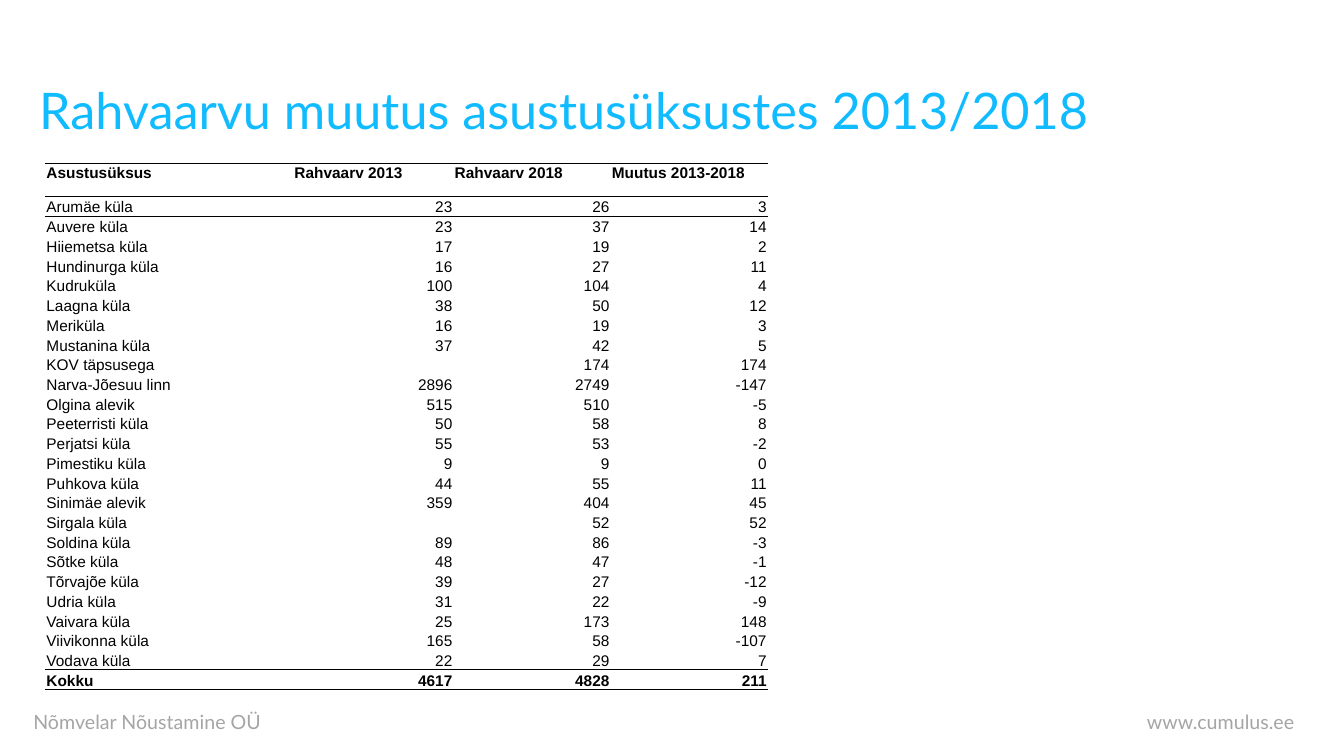
from dataclasses import dataclass
from typing import Any

import pptx
import pptx.dml.color
import pptx.enum.text
import pptx.oxml
import pptx.oxml.ns
import pptx.util

Cm = pptx.util.Cm
Pt = pptx.util.Pt
Align = pptx.enum.text.PP_ALIGN
Anchor = pptx.enum.text.MSO_ANCHOR

COLORS = {"title": "11BBFF", "footer": "A5A5A5", "table": "000000"}
NO_STYLE_NO_GRID = "{2D5ABB26-0587-4C30-8999-92F81FD0307C}"
COLUMN_WIDTHS = (6.25, 4.04, 3.96, 3.96)
HEADER_HEIGHT = 0.84
ROW_HEIGHT = 0.46
CELL_MARGINS = {
    "margin_left": Cm(0.03),
    "margin_right": Cm(0.03),
    "margin_top": Cm(0.03),
    "margin_bottom": Cm(0),
}


@dataclass
class TextLine:
    text: str
    left: float
    top: float
    width: float
    height: float
    size: int
    color: str
    inset: tuple[float, float]
    alignment: Any = Align.LEFT
    anchor: Any = Anchor.TOP
    line_spacing: float = 1.0


@dataclass
class Settlement:
    name: str
    before: int | None
    after: int
    change: int

    def labels(self) -> list[str]:
        values = (self.before, self.after, self.change)
        return [self.name] + ["" if value is None else str(value) for value in values]


TEXT_LINES = [
    TextLine("Nõmvelar Nõustamine OÜ", 0.74, 17.78, 6, 0.69, 14, "footer", (0.1, 0.1)),
    TextLine("www.cumulus.ee", 26.72, 17.78, 6, 0.69, 14, "footer", (0.1, 0.1), Align.RIGHT),
    TextLine("Rahvaarvu muutus asustusüksustes 2013/2018", 0.74, 1.02, 32, 3.68, 36, "title",
             (0.25, 0.13), Align.JUSTIFY, Anchor.MIDDLE, 0.9),
]

HEADINGS = ["Asustusüksus", "Rahvaarv 2013", "Rahvaarv 2018", "Muutus 2013-2018"]

SETTLEMENTS = [
    Settlement("Arumäe küla", 23, 26, 3),
    Settlement("Auvere küla", 23, 37, 14),
    Settlement("Hiiemetsa küla", 17, 19, 2),
    Settlement("Hundinurga küla", 16, 27, 11),
    Settlement("Kudruküla", 100, 104, 4),
    Settlement("Laagna küla", 38, 50, 12),
    Settlement("Meriküla", 16, 19, 3),
    Settlement("Mustanina küla", 37, 42, 5),
    Settlement("KOV täpsusega", None, 174, 174),
    Settlement("Narva-Jõesuu linn", 2896, 2749, -147),
    Settlement("Olgina alevik", 515, 510, -5),
    Settlement("Peeterristi küla", 50, 58, 8),
    Settlement("Perjatsi küla", 55, 53, -2),
    Settlement("Pimestiku küla", 9, 9, 0),
    Settlement("Puhkova küla", 44, 55, 11),
    Settlement("Sinimäe alevik", 359, 404, 45),
    Settlement("Sirgala küla", None, 52, 52),
    Settlement("Soldina küla", 89, 86, -3),
    Settlement("Sõtke küla", 48, 47, -1),
    Settlement("Tõrvajõe küla", 39, 27, -12),
    Settlement("Udria küla", 31, 22, -9),
    Settlement("Vaivara küla", 25, 173, 148),
    Settlement("Viivikonna küla", 165, 58, -107),
    Settlement("Vodava küla", 22, 29, 7),
    Settlement("Kokku", 4617, 4828, 211),
]


def apply_format(target: Any, values: dict[str, Any]) -> None:
    for name, value in values.items():
        setattr(target, name, value)


def add_run(paragraph: Any, text: str, color: str, font_format: dict[str, Any]) -> None:
    run = paragraph.add_run()
    run.text = text
    apply_format(run.font, font_format)
    run.font.color.rgb = pptx.dml.color.RGBColor.from_string(COLORS[color])


def draw_text_line(slide: Any, line: TextLine) -> None:
    shape = slide.shapes.add_textbox(Cm(line.left), Cm(line.top), Cm(line.width), Cm(line.height))
    horizontal, vertical = (Cm(length) for length in line.inset)
    apply_format(shape.text_frame, {
        "word_wrap": True,
        "vertical_anchor": line.anchor,
        "margin_left": horizontal,
        "margin_right": horizontal,
        "margin_top": vertical,
        "margin_bottom": vertical,
    })
    paragraph = shape.text_frame.paragraphs[0]
    apply_format(paragraph, {"alignment": line.alignment, "line_spacing": line.line_spacing})
    add_run(paragraph, line.text, line.color, {"name": "Lato", "size": Pt(line.size)})


def add_border(cell: Any, tag: str) -> None:
    namespace = pptx.oxml.ns.nsdecls("a")
    border = pptx.oxml.parse_xml(
        f'<a:{tag} {namespace} w="{Pt(0.5)}"><a:solidFill>'
        f'<a:srgbClr val="{COLORS["table"]}"/></a:solidFill></a:{tag}>'
    )
    cell._tc.get_or_add_tcPr().append(border)


def fill_cell(cell: Any, text: str, bold: bool, numeric: bool, anchor: Any, borders: list[str]) -> None:
    apply_format(cell, CELL_MARGINS | {"vertical_anchor": anchor})
    for tag in borders:
        add_border(cell, tag)
    cell.fill.background()
    paragraph = cell.text_frame.paragraphs[0]
    paragraph.alignment = Align.RIGHT if numeric else Align.LEFT
    if text:
        add_run(paragraph, text, "table", {"name": "Arial", "size": Pt(11), "bold": bold})
    else:
        namespace = pptx.oxml.ns.nsdecls("a")
        paragraph._p.append(pptx.oxml.parse_xml(f'<a:endParaRPr {namespace} sz="1100"/>'))


def draw_population_table(slide: Any) -> None:
    rows = [HEADINGS] + [settlement.labels() for settlement in SETTLEMENTS]
    last = len(rows) - 1
    frame = slide.shapes.add_table(
        len(rows), len(HEADINGS), Cm(1.14), Cm(4.11),
        Cm(sum(COLUMN_WIDTHS)), Cm(HEADER_HEIGHT + last * ROW_HEIGHT),
    )
    frame.element.xpath(".//a:tableStyleId")[0].text = NO_STYLE_NO_GRID
    table = frame.table
    apply_format(table, {"first_row": False, "horz_banding": False})
    for column, width in zip(table.columns, COLUMN_WIDTHS):
        column.width = Cm(width)
    for row_index, labels in enumerate(rows):
        header = row_index == 0
        table.rows[row_index].height = Cm(HEADER_HEIGHT if header else ROW_HEIGHT)
        borders = ["lnT"] if row_index in (0, 1, last) else []
        borders += ["lnB"] if row_index in (0, last - 1, last) else []
        for column_index, text in enumerate(labels):
            fill_cell(
                table.cell(row_index, column_index), text,
                bold=row_index in (0, last),
                numeric=not header and column_index > 0,
                anchor=Anchor.TOP if header else Anchor.BOTTOM,
                borders=borders,
            )


def main() -> None:
    presentation = pptx.Presentation()
    apply_format(presentation, {"slide_width": Cm(33.87), "slide_height": Cm(19.05)})
    slide = presentation.slides.add_slide(presentation.slide_layouts[6])
    for line in TEXT_LINES:
        draw_text_line(slide, line)
    draw_population_table(slide)
    presentation.save("out.pptx")


if __name__ == "__main__":
    main()
